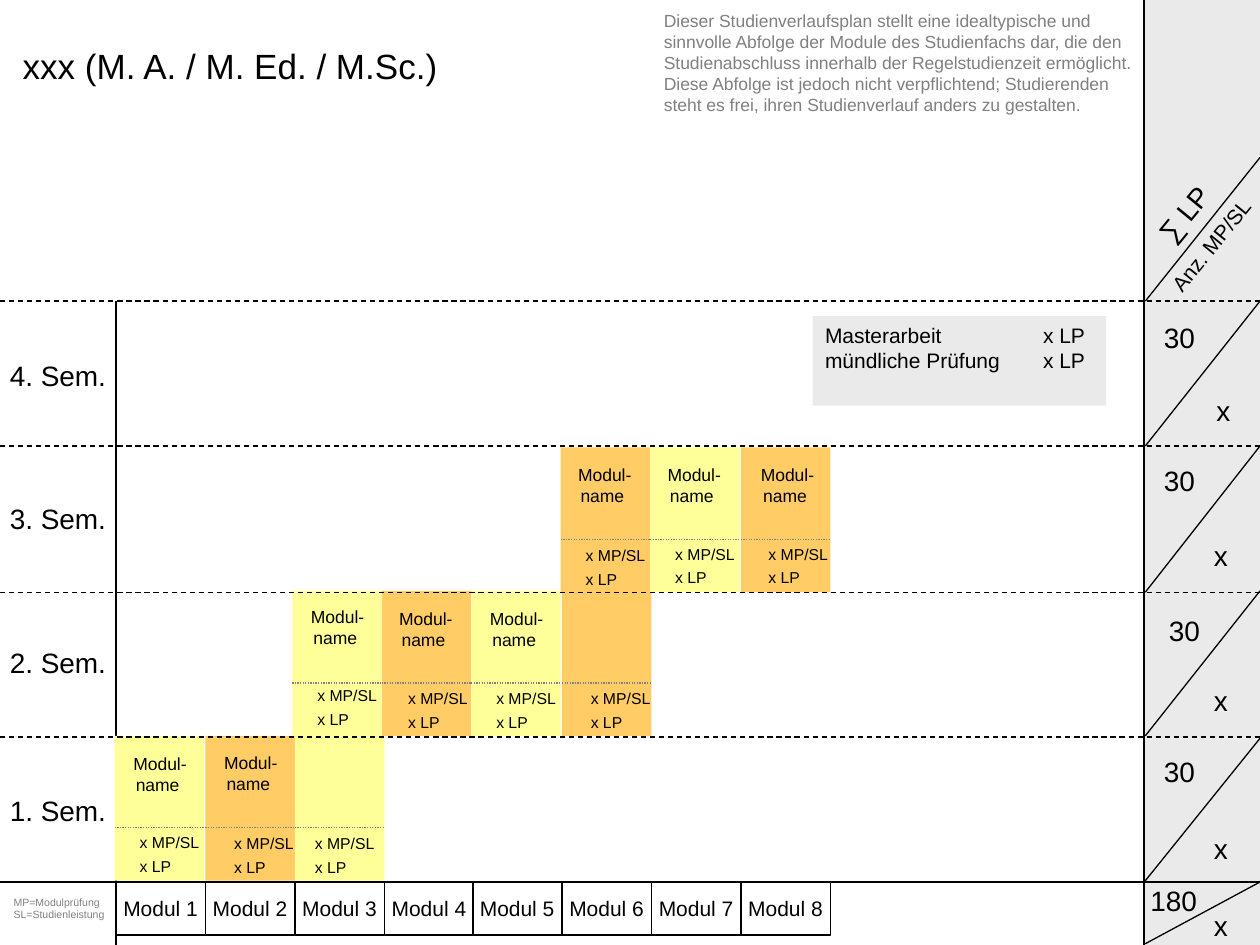
from lxml.etree import SubElement
from pptx import Presentation
from pptx.dml.color import RGBColor
from pptx.enum.dml import MSO_LINE
from pptx.enum.shapes import MSO_CONNECTOR, MSO_SHAPE
from pptx.enum.text import MSO_ANCHOR, MSO_AUTO_SIZE, PP_ALIGN
from pptx.oxml.ns import qn
from pptx.util import Pt

PX = 9144  # 100 px to the inch
BLACK, GREY, PALE = "000000", "808080", "EAEAEA"
YELLOW, ORANGE = "FFFF99", "FFCC66"
color = RGBColor.from_string

presentation = Presentation()
presentation.slide_width, presentation.slide_height = 1000 * PX, 750 * PX
slide = presentation.slides.add_slide(presentation.slide_layouts[5])


def add_text(text, left, top, width, height, size=16, ink=BLACK, fill=None, outline=None,
             centered=False, middle=False, wrap=False, rotation=0, tab=None, shape=None):
    box = [value * PX for value in (left, top, width, height)]
    if shape is not None:
        shape.left, shape.top, shape.width, shape.height = box
    elif fill or outline:
        shape = slide.shapes.add_shape(MSO_SHAPE.RECTANGLE, *box)
        shape.shadow.inherit = False
        shape.fill.background()
        shape.line.fill.background()
    else:
        shape = slide.shapes.add_textbox(*box)
    if fill:
        shape.fill.solid()
        shape.fill.fore_color.rgb = color(fill)
    if outline:
        shape.line.color.rgb = color(outline)
        shape.line.width = Pt(0.75)
    shape.rotation = rotation
    frame = shape.text_frame
    frame.text = text
    frame.word_wrap = wrap
    frame.auto_size = MSO_AUTO_SIZE.NONE
    frame.vertical_anchor = MSO_ANCHOR.MIDDLE if middle else MSO_ANCHOR.TOP
    for paragraph in frame.paragraphs:
        paragraph.alignment = PP_ALIGN.CENTER if centered else PP_ALIGN.LEFT
        if tab:
            tabs = SubElement(paragraph._p.get_or_add_pPr(), qn("a:tabLst"))
            SubElement(tabs, qn("a:tab"), pos=str(tab * PX), algn="l")
        for run in paragraph.runs:
            run.font.name = "Arial"
            run.font.size = Pt(size)
            run.font.color.rgb = color(ink)


def add_line(x1, y1, x2, y2, ink=BLACK, dash=None):
    line = slide.shapes.add_connector(MSO_CONNECTOR.STRAIGHT, x1 * PX, y1 * PX, x2 * PX, y2 * PX)
    line.line.color.rgb = color(ink)
    line.line.width = Pt(0.75)
    if dash:
        line.line.dash_style = dash
    SubElement(line._element.spPr, qn("a:effectLst"))


# Title and introduction
add_text("xxx (M. A. / M. Ed. / M.Sc.)", 8, 30, 351, 44, size=20, shape=slide.shapes.title)
add_text("Dieser Studienverlaufsplan stellt eine idealtypische und sinnvolle Abfolge der Module "
         "des Studienfachs dar, die den Studienabschluss innerhalb der Regelstudienzeit "
         "ermöglicht. Diese Abfolge ist jedoch nicht verpflichtend; Studierenden steht es frei, "
         "ihren Studienverlauf anders zu gestalten.", 517, 3, 392, 94, size=10, ink=GREY, wrap=True)

# Semester axis and module numbers
add_line(92, 750, 92, 239)
for number, top in enumerate((593, 476, 361, 248), start=1):
    add_text(f"{number}. Sem.", 0, top, 92, 100, centered=True, middle=True)
for index in range(8):
    add_text(f"Modul {index + 1}", 92 + round(70.86 * index), 700, 71, 42, size=12,
             outline=BLACK, centered=True, middle=True)
add_text("MP=Modulprüfung\nSL=Studienleistung", 1, 706, 93, 30, size=6, ink=GREY, wrap=True)

# Modules by top edge: left, fill, (left, top) of name or None, (left, top) of details
modules = {
    584: [(91, YELLOW, (92, 593), (101, 656)),
          (163, ORANGE, (164, 592), (176, 657)),
          (234, YELLOW, None, (240, 657))],
    469: [(232, YELLOW, (233, 476), (242, 539)),
          (303, ORANGE, (303, 478), (314, 542)),
          (374, YELLOW, (375, 478), (384, 542)),
          (446, ORANGE, None, (459, 542))],
    355: [(445, ORANGE, (445, 363), (455, 428)),
          (516, YELLOW, (516, 363), (526, 427)),
          (588, ORANGE, (590, 363), (600, 427))],
}
for top, row in modules.items():
    for left, fill, name, (detail_left, detail_top) in row:
        add_text("", left, top, 71, 115, fill=fill)
        add_line(left, top + 73, left + 71, top + 73, ink=GREY, dash=MSO_LINE.ROUND_DOT)
        if name:
            add_text("Modul-name ", *name, 70, 44, size=10, centered=True, wrap=True)
        add_text("x MP/SL", detail_left, detail_top, 68, 25, size=9)
        add_text("x LP", detail_left, detail_top + 19, 45, 25, size=9)

# Final thesis
add_text("Masterarbeit\tx LP\nmündliche Prüfung\tx LP", 645, 251, 233, 71, size=12,
         fill=PALE, wrap=True, tab=173)

# Totals column
add_text("", 908, 0, 92, 750, fill=PALE)
add_line(908, 750, 908, 0)
add_text("∑ LP", 905, 151, 69, 37, rotation=309.3)
add_text("Anz. MP/SL", 907, 179, 109, 30, size=12, rotation=309)
for bottom, top in ((239, 125), (354, 239), (470, 354), (584, 469), (699, 586), (749, 700)):
    add_line(909, bottom, 1000, top)
for left, top in ((913, 247), (913, 360), (917, 479), (913, 591)):
    add_text("30", left, top, 46, 42, centered=True, middle=True)
add_text("180", 901, 696, 61, 37, centered=True, wrap=True)
for left, top in ((948, 305), (946, 420), (946, 535), (946, 652), (946, 713)):
    add_text("x", left, top, 46, 42, centered=True, middle=True)

# Semester boundaries
for y in (239, 354, 470, 585):
    add_line(0, y, 1000, y, dash=MSO_LINE.DASH)
add_line(0, 700, 1000, 700)

presentation.save("out.pptx")
